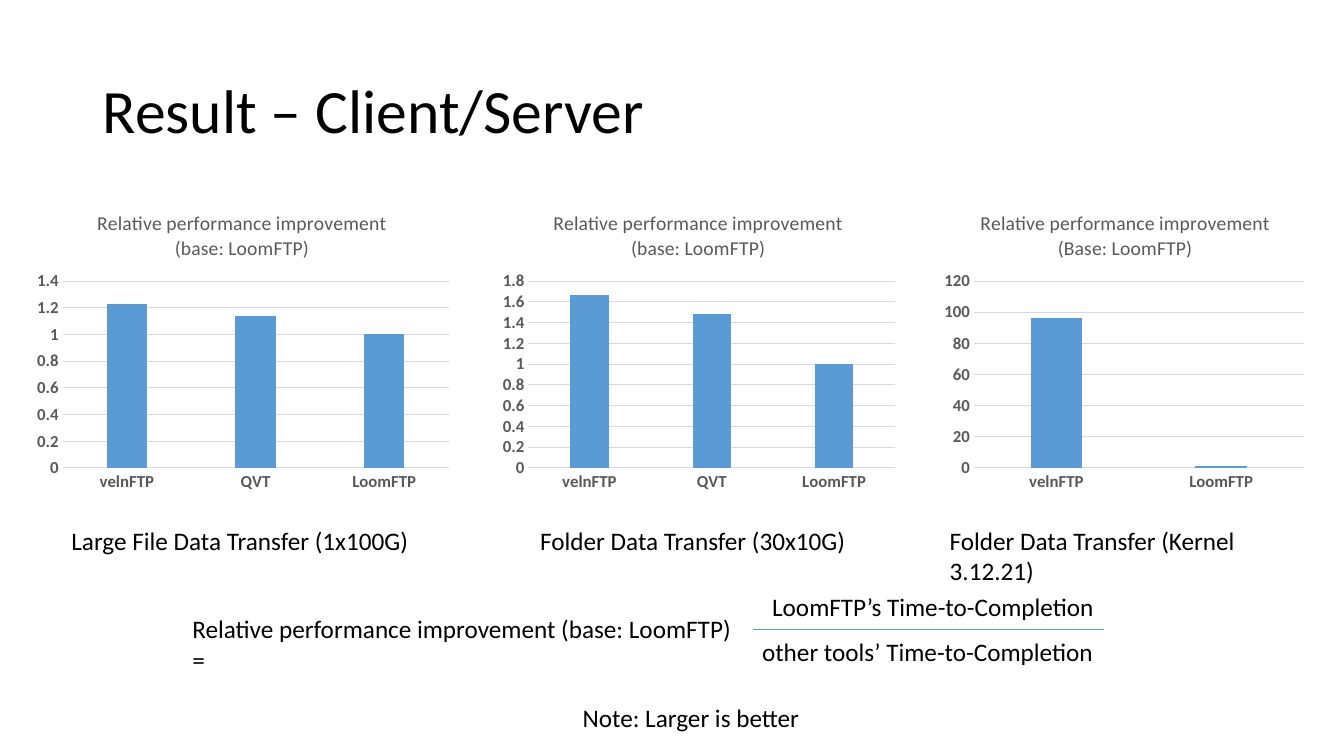
from lxml import etree
from pptx import Presentation
from pptx.chart import data
from pptx.dml.color import RGBColor
from pptx.enum import chart as ch, shapes, text
from pptx.oxml import ns
from pptx.util import Inches, Pt

FONT = "Calibri"
COLORS = {"ink": "000000", "label": "595959", "grid": "D9D9D9", "bar": "5B9BD5"}
CHART_TOP, CHART_HEIGHT = 1.94, 3
CAPTION_TOP = 5.16

# left, width, base line of title, results, axis maximum, axis step
CHARTS = [
    (0.28, 4.24, "(base: LoomFTP)", {"velnFTP": 1.23, "QVT": 1.14, "LoomFTP": 1}, 1.4, 0.2),
    (4.9, 4.05, "(base: LoomFTP)", {"velnFTP": 1.67, "QVT": 1.48, "LoomFTP": 1}, 1.8, 0.2),
    (9.32, 3.68, "(Base: LoomFTP)", {"velnFTP": 96, "LoomFTP": 1}, 120, 20),
]
# left, top, width, wording
LABELS = [
    (0.61, CAPTION_TOP, 3.58, "Large File Data Transfer (1x100G)"),
    (5.26, CAPTION_TOP, 3.26, "Folder Data Transfer (30x10G)"),
    (9.32, CAPTION_TOP, 3.85, "Folder Data Transfer (Kernel 3.12.21)"),
    (1.81, 6.04, 5.66, "Relative performance improvement (base: LoomFTP) ="),
    (7.56, 5.82, 3.39, "LoomFTP’s Time-to-Completion"),
    (7.46, 6.26, 3.52, "other tools’ Time-to-Completion"),
    (5.68, 6.92, 2.38, "Note: Larger is better"),
]


def rgb(name):
    return RGBColor.from_string(COLORS[name])


def style_font(font, size, color, bold=False):
    font.name, font.size, font.bold = FONT, Pt(size), bold
    font.color.rgb = rgb(color)


def style_line(line, color, width):
    line.color.rgb = rgb(color)
    line.width = Pt(width)


def add_title(slide, wording):
    title = slide.shapes.title
    title.left, title.top = Inches(0.92), Inches(0.4)
    title.width, title.height = Inches(11.5), Inches(1.45)
    title.text_frame.text = wording
    title.text_frame.vertical_anchor = text.MSO_ANCHOR.MIDDLE
    heading = title.text_frame.paragraphs[0]
    heading.alignment = text.PP_ALIGN.LEFT
    heading.line_spacing = 0.9
    style_font(heading.font, 44, "ink")


def add_label(slide, left, top, width, wording):
    label = slide.shapes.add_textbox(Inches(left), Inches(top), Inches(width), Inches(0.4))
    label.text_frame.word_wrap = False
    label.text_frame.auto_size = text.MSO_AUTO_SIZE.SHAPE_TO_FIT_TEXT
    label.text_frame.text = wording
    style_font(label.text_frame.paragraphs[0].font, 18, "ink")


def set_plot_area(chart, width):
    """Place the inner plot area below the title, with equal insets."""
    plot_area = chart.element.find(".//" + ns.qn("c:plotArea"))
    for old in plot_area.findall(ns.qn("c:layout")):
        plot_area.remove(old)
    layout = etree.Element(ns.qn("c:layout"))
    manual = etree.SubElement(layout, ns.qn("c:manualLayout"))
    settings = {"layoutTarget": "inner", "xMode": "edge", "yMode": "edge",
                "x": 0.34 / width, "y": 0.283, "w": 1 - 0.41 / width, "h": 0.618}
    for tag, value in settings.items():
        etree.SubElement(manual, ns.qn("c:" + tag)).set("val", str(value))
    plot_area.insert(0, layout)


def add_result_chart(slide, left, width, base, results, maximum, step):
    chart_data = data.CategoryChartData()
    chart_data.categories = list(results)
    chart_data.add_series("Series 1", list(results.values()))
    chart = slide.shapes.add_chart(
        ch.XL_CHART_TYPE.COLUMN_CLUSTERED, Inches(left), Inches(CHART_TOP),
        Inches(width), Inches(CHART_HEIGHT), chart_data).chart
    chart.has_legend = False
    style_font(chart.font, 10, "ink")

    # Title
    heading = chart.chart_title.text_frame
    heading.text = "Relative performance improvement\n" + base
    for paragraph in heading.paragraphs:
        style_font(paragraph.font, 14, "label")
    chart.chart_title.include_in_layout = False

    # Axes
    for axis in (chart.category_axis, chart.value_axis):
        axis.major_tick_mark = axis.minor_tick_mark = ch.XL_TICK_MARK.NONE
        style_font(axis.tick_labels.font, 12, "label", bold=True)
    style_line(chart.category_axis.format.line, "grid", 0.75)
    values = chart.value_axis
    values.minimum_scale, values.maximum_scale, values.major_unit = 0, maximum, step
    values.format.line.fill.background()
    style_line(values.major_gridlines.format.line, "grid", 0.75)

    # Columns
    plot = chart.plots[0]
    plot.gap_width, plot.overlap, plot.vary_by_categories = 219, -27, False
    columns = plot.series[0].format.fill
    columns.solid()
    columns.fore_color.rgb = rgb("bar")
    set_plot_area(chart, width)


def add_fraction_bar(slide):
    bar = slide.shapes.add_connector(
        shapes.MSO_CONNECTOR.STRAIGHT,
        Inches(7.47), Inches(6.24), Inches(10.95), Inches(6.24))
    style_line(bar.line, "bar", 0.5)
    etree.SubElement(bar.element.spPr, ns.qn("a:effectLst"))


def main():
    deck = Presentation()
    deck.slide_width, deck.slide_height = Inches(13.33), Inches(7.5)
    slide = deck.slides.add_slide(deck.slide_layouts[5])

    add_title(slide, "Result – Client/Server")
    for result in CHARTS:
        add_result_chart(slide, *result)
    # Captions, formula and note
    for label in LABELS:
        add_label(slide, *label)
    add_fraction_bar(slide)

    deck.save("out.pptx")


if __name__ == "__main__":
    main()
